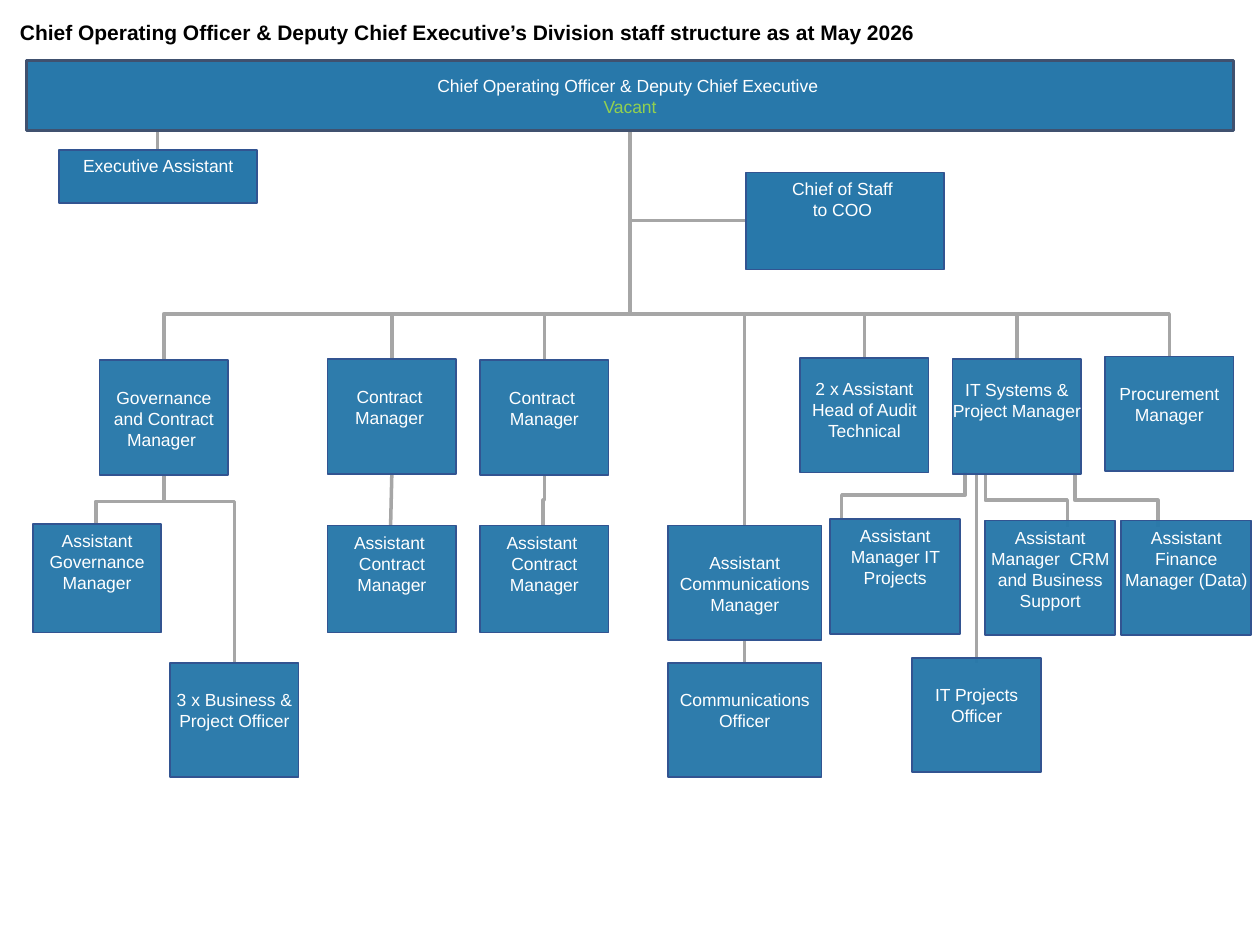
from lxml import etree
from pptx import Presentation
from pptx import util as u
from pptx.dml.color import RGBColor
from pptx.enum import shapes, text
from pptx.oxml.ns import qn

COLORS = {"box": "2878AA", "edge": "325491", "head_edge": "40516F",
          "link": "A6A6A6", "assistant_link": "A5A5A5",
          "white": "FFFFFF", "black": "000000", "vacant": "92D050"}
LINE_HEIGHT = 0.16  # one line of 10 pt text, in inches


def rgb(name):
    return RGBColor.from_string(COLORS[name])


def write(frame, lines, size=10, colors=("white",), bold=False, spacing=None,
          align=text.PP_ALIGN.CENTER, anchor=text.MSO_ANCHOR.TOP,
          insets=(0.1, 0.05)):
    """Write lines into a frame; insets are side, top and optionally bottom."""
    side, top, bottom = insets if len(insets) == 3 else (*insets, insets[1])
    frame.word_wrap = True
    frame.vertical_anchor = anchor
    frame.margin_left = frame.margin_right = u.Inches(side)
    frame.margin_top, frame.margin_bottom = u.Inches(top), u.Inches(bottom)
    for i, line in enumerate(lines):
        paragraph = frame.paragraphs[0] if i == 0 else frame.add_paragraph()
        paragraph.alignment = align
        if spacing:
            paragraph.line_spacing = spacing
        run = paragraph.add_run()
        run.text = line
        run.font.name = "Arial"
        run.font.size = u.Pt(size)
        run.font.bold = bold
        run.font.color.rgb = rgb(colors[min(i, len(colors) - 1)])


class OrgChart:
    def __init__(self, slide):
        self.slide = slide

    def title(self, place, wording):
        box = self.slide.shapes.add_textbox(*map(u.Inches, place))
        write(box.text_frame, [wording], size=12, colors=("black",), bold=True,
              spacing=0.9, align=text.PP_ALIGN.LEFT,
              anchor=text.MSO_ANCHOR.MIDDLE)

    def box(self, place, lines, edge="edge", weight=1, opacity=None, **style):
        box = self.slide.shapes.add_shape(
            shapes.MSO_SHAPE.RECTANGLE, *map(u.Inches, place))
        box.shadow.inherit = False
        box.fill.solid()
        box.fill.fore_color.rgb = rgb("box")
        if opacity:
            tint = box.fill._xPr.find(".//" + qn("a:srgbClr"))
            etree.SubElement(tint, qn("a:alpha"), val=str(opacity * 1000))
        box.line.color.rgb = rgb(edge)
        box.line.width = u.Pt(weight)
        write(box.text_frame, lines, **style)

    def role(self, left, top, lines, width=1.02, height=0.91, lowered=True,
             insets=(0.02, 0.05)):
        side, edge = insets
        drop = LINE_HEIGHT if lowered else 0
        self.box((left, top, width, height), lines, opacity=97,
                 insets=(side, edge + drop, edge))

    def connect(self, kind, ends, color="link", weight=2):
        link = self.slide.shapes.add_connector(kind, *map(u.Inches, ends))
        link.line.color.rgb = rgb(color)
        link.line.width = u.Pt(weight)
        etree.SubElement(link._element.spPr, qn("a:effectLst"))
        return link

    def straight(self, x1, y1, x2, y2, **style):
        self.connect(shapes.MSO_CONNECTOR.STRAIGHT, (x1, y1, x2, y2), **style)

    def elbow(self, x1, y1, x2, y2, bend=None):
        """Run down, across at height bend, then down; no bend ends across."""
        length, reach = y2 - y1, abs(x2 - x1)
        left = (x1 + x2 - length) / 2
        top = (y1 + y2 - reach) / 2
        start, end = left, left + length
        if x2 > x1:  # a mirrored start turns the run to the right
            start, end = end, start
        link = self.connect(shapes.MSO_CONNECTOR.ELBOW,
                            (start, top, end, top + reach))
        properties = link._element.spPr
        turn = 270 if x2 > x1 else 90
        properties.find(qn("a:xfrm")).set("rot", str(turn * 60000))
        geometry = properties.find(qn("a:prstGeom"))
        if bend is None:
            geometry.set("prst", "bentConnector2")
        else:
            share = round((bend - y1) / length * 100000)
            etree.SubElement(geometry.find(qn("a:avLst")), qn("a:gd"),
                             name="adj1", fmla=f"val {share}")


def main():
    deck = Presentation()
    deck.slide_width, deck.slide_height = u.Inches(10), u.Inches(7.5)
    chart = OrgChart(deck.slides.add_slide(deck.slide_layouts[6]))

    # Links from the chief operating officer to the managers
    for x, y in [(8.07, 2.85), (6.86, 2.84), (5.91, 4.17), (1.3, 2.86),
                 (3.11, 2.85), (4.32, 2.86), (9.28, 2.83)]:
        chart.elbow(5, 1.04, x, y, bend=2.49)
    chart.elbow(5, 1.04, 5.92, 1.75)
    chart.straight(1.25, 1.04, 1.25, 1.19, color="assistant_link", weight=2.25)

    # Links from the managers to their teams
    for ends, bend in [((1.3, 3.77, 0.76, 4.16), 3.98),
                       ((1.3, 3.77, 1.86, 5.26), 3.98),
                       ((4.32, 3.77, 4.31, 4.17), 3.97),
                       ((7.66, 3.75, 6.68, 4.11), 3.93),
                       ((7.82, 3.77, 8.47, 4.18), 3.97),
                       ((8.53, 3.77, 9.19, 4.18), 3.97)]:
        chart.elbow(*ends, bend=bend)
    for ends in [(7.75, 3.76, 7.75, 5.26), (5.91, 5.08, 5.91, 5.26),
                 (3.11, 3.76, 3.1, 4.17)]:
        chart.straight(*ends)

    # Title and head of division
    chart.title((0.06, 0.12, 7.92, 0.29),
                "Chief Operating Officer & Deputy Chief Executive’s Division "
                "staff structure as at May 2026")
    chart.box((0.21, 0.48, 9.58, 0.56),
              ["Chief Operating Officer & Deputy Chief Executive ", "Vacant"],
              edge="head_edge", weight=1.75, colors=("white", "vacant"),
              anchor=text.MSO_ANCHOR.MIDDLE)

    # Office of the head
    chart.box((0.47, 1.19, 1.57, 0.42), ["Executive Assistant"],
              insets=(0.04, 0.04))
    chart.box((5.92, 1.37, 1.57, 0.77), ["Chief of Staff ", "to COO "],
              insets=(0.04, 0.04))

    # Managers
    chart.role(0.79, 2.86, ["Governance and Contract Manager "])
    chart.role(2.6, 2.85, ["Contract ", "Manager "])
    chart.role(3.81, 2.86, ["Contract ", "Manager"])
    chart.role(6.35, 2.84, ["2 x Assistant Head of Audit Technical"],
               insets=(0, 0))
    chart.role(7.56, 2.85, ["IT Systems & Project Manager"], insets=(0, 0))
    chart.role(8.77, 2.83, ["Procurement Manager"])

    # Assistant managers
    chart.role(0.26, 4.16, ["Assistant Governance", "Manager"], height=0.86,
               lowered=False)
    for left in (2.6, 3.81):
        chart.role(left, 4.17, ["Assistant ", "Contract Manager"], height=0.85,
                   lowered=False)
    chart.role(5.3, 4.17, ["Assistant Communications Manager"], width=1.22,
               insets=(0, 0.05))
    for left, top, name in [
            (6.59, 4.12, "Assistant Manager IT Projects"),
            (7.82, 4.13, "Assistant Manager  CRM and Business Support"),
            (8.9, 4.13, "Assistant Finance Manager (Data)")]:
        chart.role(left, top, [name], width=1.03, lowered=False)

    # Officers
    chart.role(1.35, 5.26, ["3 x Business & Project Officer"])
    chart.role(5.3, 5.26, ["Communications Officer"], width=1.22)
    chart.role(7.24, 5.22, ["IT Projects Officer"])

    deck.save("out.pptx")


if __name__ == "__main__":
    main()
